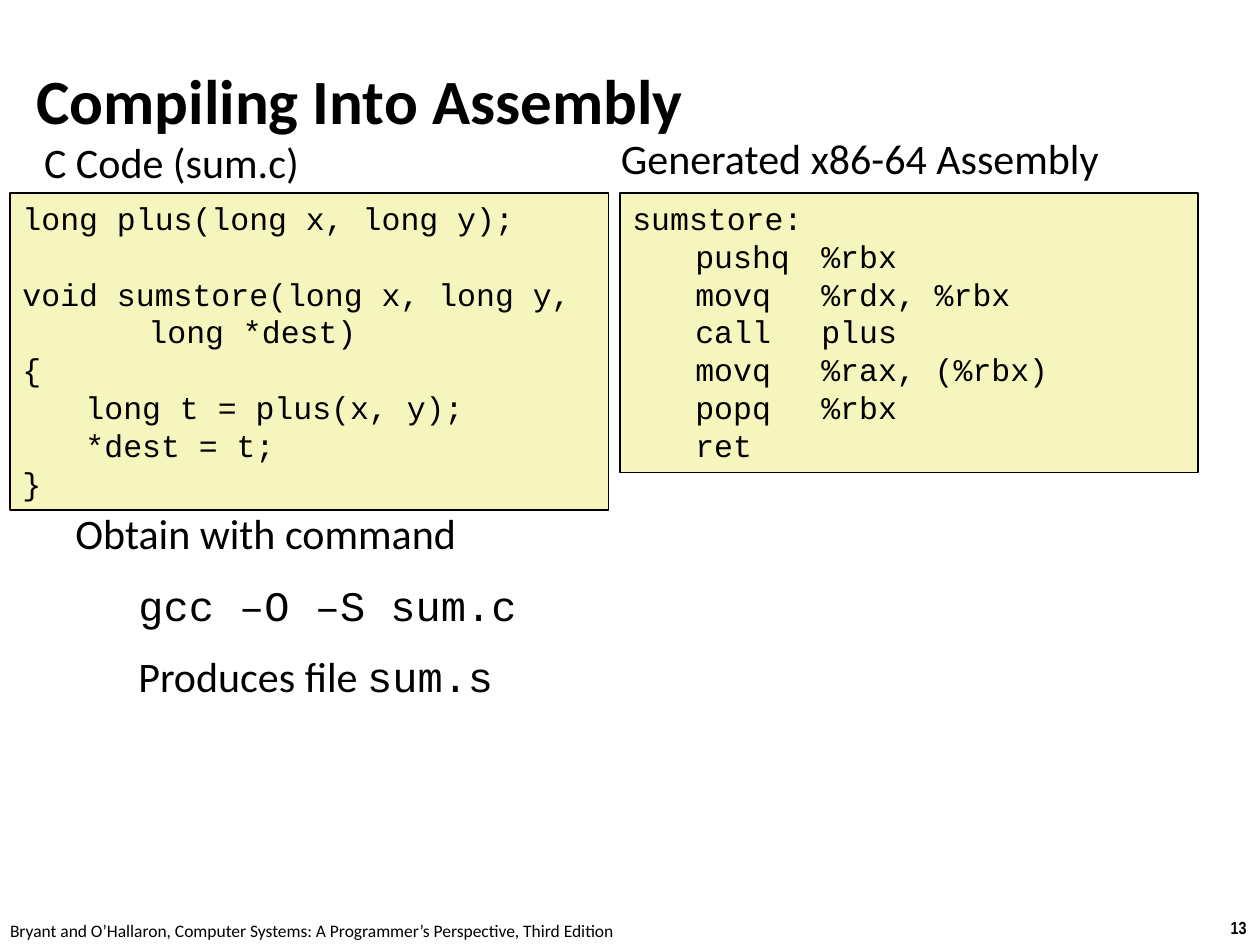
from lxml.etree import SubElement
from pptx import Presentation
from pptx.dml.color import RGBColor
from pptx.enum.shapes import MSO_SHAPE as Shape
from pptx.enum.text import MSO_ANCHOR as Anchor, MSO_AUTO_SIZE as AutoSize, PP_ALIGN as Align
from pptx.oxml.ns import qn
from pptx.util import Inches, Pt

BLACK = RGBColor(0x00, 0x00, 0x00)
WHITE = RGBColor(0xFF, 0xFF, 0xFF)
CODE_YELLOW = RGBColor(0xF6, 0xF5, 0xBD)
SANS, MONO, NARROW = "Calibri", "Courier New", "Arial Narrow"
CHARACTER = Inches(0.15)  # advance of one 18 pt monospaced character
CODE_LINE = 21.6

presentation = Presentation()
presentation.slide_width, presentation.slide_height = Inches(10), Inches(7.5)
COLUMN = presentation.slide_width / 100
ROW = presentation.slide_height / 75


def grid(left, top, width, height):
    """Turn columns and rows into slide lengths."""
    return [round(n * unit) for n, unit in zip((left, top, width, height), (COLUMN, ROW) * 2)]


def write(shape, *lines, size=24, font=SANS, bold=False, align=Align.LEFT, anchor=Anchor.TOP,
          inset=(0.1, 0.05), wrap=True, spacing=None, tab_columns=()):
    """Fill a shape with lines, each a (runs, indent in inches, points before) triple.

    A run is a (text, font) pair; a line given as plain text is one run.
    """
    frame = shape.text_frame
    frame.auto_size, frame.word_wrap, frame.vertical_anchor = AutoSize.NONE, wrap, anchor
    frame.margin_left = frame.margin_right = Inches(inset[0])
    frame.margin_top = frame.margin_bottom = Inches(inset[1])
    for number, line in enumerate(lines):
        runs, indent, before = ([(line, font)], 0, 0) if isinstance(line, str) else line
        paragraph = frame.paragraphs[0] if number == 0 else frame.add_paragraph()
        paragraph.alignment = align
        paragraph.space_before = Pt(before)
        if spacing:
            paragraph.line_spacing = Pt(spacing)
        properties = paragraph._p.get_or_add_pPr()
        properties.set("marL", str(Inches(indent)))
        properties.set("indent", "0")
        SubElement(properties, qn("a:buNone"))
        if tab_columns:
            tabs = SubElement(properties, qn("a:tabLst"))
            for column in tab_columns:
                SubElement(tabs, qn("a:tab"), pos=str(column * CHARACTER), algn="l")
        for text, run_font in runs:
            run = paragraph.add_run()
            run.text = text
            run.font.name, run.font.size, run.font.bold = run_font, Pt(size), bold
            run.font.color.rgb = BLACK


slide = presentation.slides.add_slide(presentation.slide_layouts[1])
slide.background.fill.solid()
slide.background.fill.fore_color.rgb = WHITE

title, source_heading = slide.shapes.title, slide.placeholders[1]
title.left, title.top, title.width, title.height = grid(2.5, 4.8, 74.9, 6.1)
write(title, "Compiling Into Assembly", size=36, bold=True, anchor=Anchor.MIDDLE,
      inset=(0.04, 0.04))

(source_heading.left, source_heading.top,
 source_heading.width, source_heading.height) = grid(2.5, 10.3, 26.7, 4)
write(source_heading, "C Code (sum.c)")
assembly_heading = slide.shapes.add_textbox(*grid(48.3, 10, 45, 4.5))
write(assembly_heading, "Generated x86-64 Assembly")

c_code = [
    "long plus(long x, long y);",
    ([("void sumstore(long x, long y,", MONO)], 0, CODE_LINE),
    "\t\tlong *dest)",
    "{",
    "\tlong t = plus(x, y);",
    "\t*dest = t;",
    "}",
]
assembly_code = [
    "sumstore:",
    "\tpushq\t%rbx",
    "\tmovq\t%rdx, %rbx",
    "\tcall\tplus",
    "\tmovq\t%rax, (%rbx)",
    "\tpopq\t%rbx",
    "\tret",
]
for code, tab_columns, left, width, height in [
    (c_code, (4, 14), 0.8, 47.5, 25.2),
    (assembly_code, (3, 11), 49.2, 45.9, 22.2),
]:
    box = slide.shapes.add_shape(Shape.RECTANGLE, *grid(left, 15.3, width, height))
    box.shadow.inherit = False
    box.fill.solid()
    box.fill.fore_color.rgb = CODE_YELLOW
    box.line.color.rgb = BLACK
    box.line.width = Pt(1)
    write(box, *code, size=18, font=MONO, spacing=CODE_LINE, tab_columns=tab_columns)

command = slide.shapes.add_textbox(*grid(5, 39.8, 81.7, 17.1))
write(command,
      "Obtain with command",
      ([("gcc –O –S sum.c", MONO)], 0.5, 12),
      ([("Produces file ", SANS), ("sum.s", MONO)], 0.5, 12))

footer = slide.shapes.add_textbox(*grid(0, 72.5, 50.6, 2.7 - 0.2))
write(footer,
      "Bryant and O’Hallaron, Computer Systems: A Programmer’s Perspective, Third Edition",
      size=10, inset=(0.08, 0.05), wrap=False)
page_number = slide.shapes.add_textbox(*grid(96.6, 72.3, 3.4, 2.7))
write(page_number, "13", size=10, font=NARROW, bold=True, align=Align.CENTER, wrap=False)

presentation.save("out.pptx")
